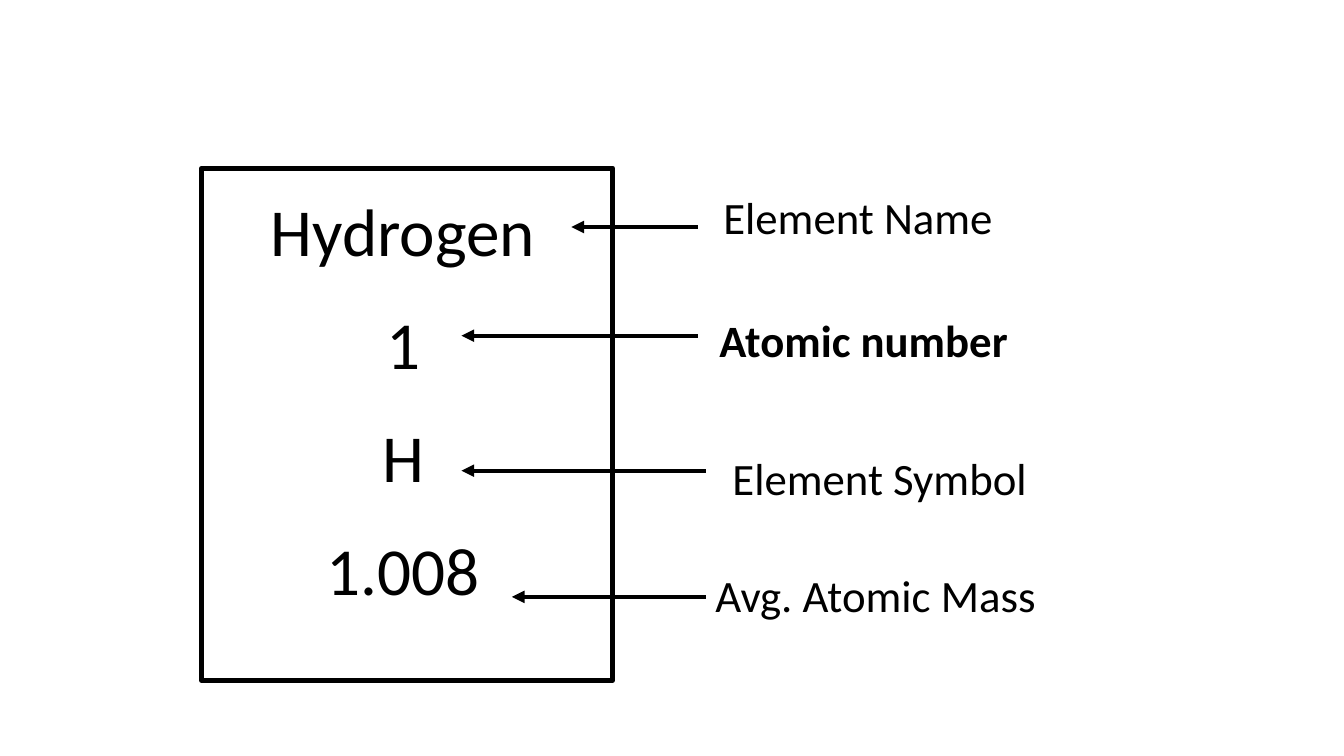
from lxml import etree
from pptx import Presentation
from pptx.dml.color import RGBColor
from pptx.enum.shapes import MSO_CONNECTOR, MSO_SHAPE
from pptx.enum.text import MSO_AUTO_SIZE, PP_ALIGN
from pptx.oxml.ns import qn
from pptx.util import Cm, Pt

RECTANGLE, STRAIGHT = MSO_SHAPE.RECTANGLE, MSO_CONNECTOR.STRAIGHT
LEFT, CENTER = PP_ALIGN.LEFT, PP_ALIGN.CENTER
FIT_SHAPE = MSO_AUTO_SIZE.SHAPE_TO_FIT_TEXT

BLACK = "000000"
ELEMENT_FACTS = ["Hydrogen", "1", "H", "1.008"]
TILE_BOX = (5.08, 4.24, 10.36, 12.9)
FACTS_BOX = (5.08, 4.65, 10.16, 11.46)
LABEL_HEIGHT = 1.6

# label, bold, (left, top, width), (arrow start x, arrow tip x, arrow y), all in cm
CALLOUTS = [
    ("Element Name", False, (17.98, 4.65, 9.96), (17.58, 14.4, 5.72)),
    ("Atomic number", True, (17.88, 7.75, 9.68), (17.58, 11.63, 8.46)),
    ("Element Symbol", False, (18.21, 11.23, 9.4), (17.78, 11.63, 11.86)),
    ("Avg. Atomic Mass", False, (17.78, 14.17, 11.23), (17.78, 12.9, 15.04)),
]


def color(hex_value):
    return RGBColor.from_string(hex_value)


def cm(lengths):
    return [Cm(length) for length in lengths]


def add_text(slide, box, lines, size, align=LEFT, bold=False):
    frame = slide.shapes.add_textbox(*cm(box)).text_frame
    frame.word_wrap = True
    frame.auto_size = FIT_SHAPE
    font_format = {"name": "Calibri", "size": Pt(size), "bold": bold}
    for index, line in enumerate(lines):
        paragraph = frame.add_paragraph() if index else frame.paragraphs[0]
        paragraph.text = line
        paragraph.alignment = align
        paragraph.space_before = Pt(23 if index else 0)
        for attribute, value in font_format.items():
            setattr(paragraph.font, attribute, value)
        paragraph.font.color.rgb = color(BLACK)


def add_arrow(slide, start_x, tip_x, y):
    arrow = slide.shapes.add_connector(STRAIGHT, *cm((start_x, y, tip_x, y)))
    arrow.line.color.rgb = color(BLACK)
    arrow.line.width = Pt(3)
    etree.SubElement(arrow.line._get_or_add_ln(), qn("a:tailEnd"), type="triangle")
    etree.SubElement(arrow._element.spPr, qn("a:effectLst"))


def main():
    presentation = Presentation()
    presentation.slide_width, presentation.slide_height = cm((33.87, 19.05))
    slide = presentation.slides.add_slide(presentation.slide_layouts[6])

    tile = slide.shapes.add_shape(RECTANGLE, *cm(TILE_BOX))
    tile.shadow.inherit = False
    tile.fill.background()
    tile.line.color.rgb = color(BLACK)
    tile.line.width = Pt(3.75)
    add_text(slide, FACTS_BOX, ELEMENT_FACTS, 48, CENTER)

    for label, bold, label_place, arrow_place in CALLOUTS:
        add_arrow(slide, *arrow_place)
        add_text(slide, (*label_place, LABEL_HEIGHT), [label], 32, bold=bold)

    presentation.save("out.pptx")


if __name__ == "__main__":
    main()
